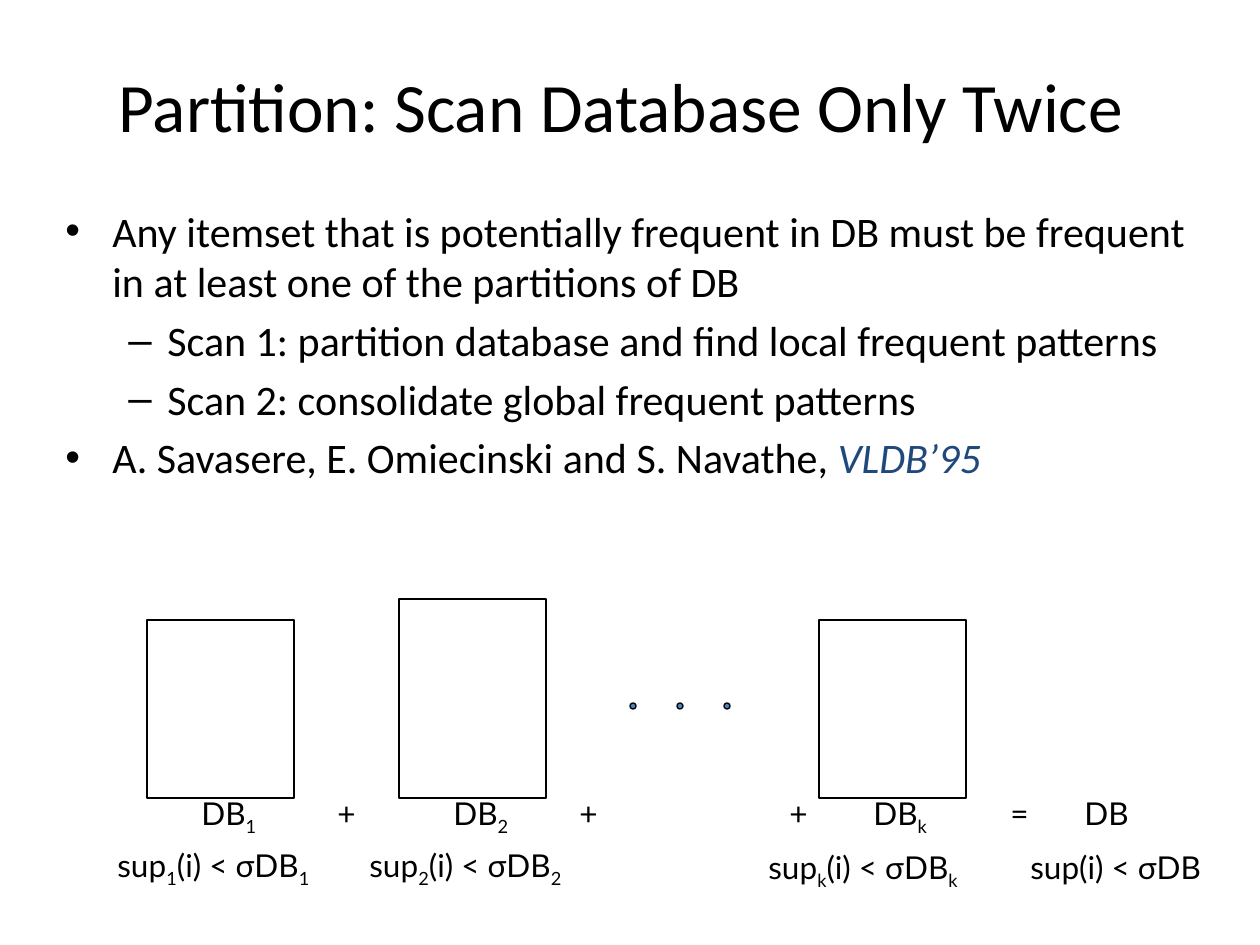
from dataclasses import dataclass

from lxml import etree
from pptx import Presentation
from pptx import util as u
from pptx.dml.color import RGBColor
from pptx.enum import shapes, text
from pptx.oxml import ns

PX_PER_INCH = 126


@dataclass(frozen=True)
class Theme:
    ink: str = "000000"
    accent: str = "1F497D"
    dot: str = "4F81BD"
    body_font: str = "Calibri"
    label_font: str = "Lato"
    title_size: float = 39.6
    body_size: float = 24
    label_size: float = 18
    body_gap: float = 4.8
    line: float = 0.75


@dataclass(frozen=True)
class Box:
    left: int
    top: int
    width: int
    height: int


@dataclass(frozen=True)
class Level:
    char: str
    margin: int
    hang: int


@dataclass(frozen=True)
class Bullet:
    level: int
    text: str
    cited: str = ""


@dataclass(frozen=True)
class Partition:
    index: str
    rect: Box
    sup_left: int
    sup_top: int


THEME = Theme()
LEVELS = (Level("•", 47, 47), Level("–", 102, 39))
BULLETS = (
    Bullet(0, "Any itemset that is potentially frequent in DB must be frequent "
              "in at least one of the partitions of DB"),
    Bullet(1, "Scan 1: partition database and find local frequent patterns"),
    Bullet(1, "Scan 2: consolidate global frequent patterns"),
    Bullet(0, "A. Savasere, E. Omiecinski and S. Navathe, ", "VLDB’95"),
)
PARTITIONS = (
    Partition("1", Box(147, 620, 147, 178), 105, 840),
    Partition("2", Box(399, 599, 147, 199), 357, 840),
    Partition("k", Box(819, 620, 147, 178), 756, 842),
)
PLUS_LEFTS = (325, 567, 777)
LABEL_TOP, LABEL_HEIGHT = 788, 50
DB_INSET, DB_WIDTH, PLUS_WIDTH, SUP_WIDTH = 42, 84, 32, 231
TOTAL_LEFT, TOTAL_WIDTH, TOTAL_TAB = 998, 189, 74
TOTAL_SUP_LEFT, TOTAL_SUP_TOP = 1018, 842
DOT_LEFT, DOT_TOP, DOT_STEP, DOT_SIZE, DOT_COUNT = 630, 703, 47, 6, 3


def px(n: int) -> int:
    return round(n * u.Inches(1) / PX_PER_INCH)


def place(box: Box) -> tuple[int, int, int, int]:
    return px(box.left), px(box.top), px(box.width), px(box.height)


def add_run(p, content: str, *, size: float, font: str, color: str = THEME.ink,
            italic: bool = False, baseline: int = 0) -> None:
    r = p.add_run()
    r.text = content
    r.font.size = u.Pt(size)
    r.font.name = font
    r.font.italic = italic
    r.font.color.rgb = RGBColor.from_string(color)
    if baseline:
        r._r.get_or_add_rPr().set("baseline", str(baseline * 1000))


def add_frame(s, box: Box):
    tf = s.shapes.add_textbox(*place(box)).text_frame
    tf.word_wrap = True
    return tf


def add_title(s) -> None:
    tf = add_frame(s, Box(84, 63, 1074, 84))
    tf.vertical_anchor = text.MSO_ANCHOR.MIDDLE
    p = tf.paragraphs[0]
    p.alignment = text.PP_ALIGN.CENTER
    add_run(p, "Partition: Scan Database Only Twice",
            size=THEME.title_size, font=THEME.body_font)


def set_bullet(p, level: Level) -> None:
    pPr = p._p.get_or_add_pPr()
    pPr.set("marL", str(px(level.margin)))
    pPr.set("indent", str(-px(level.hang)))
    etree.SubElement(pPr, ns.qn("a:buFont")).set("typeface", "Arial")
    etree.SubElement(pPr, ns.qn("a:buChar")).set("char", level.char)


def add_bullets(s) -> None:
    tf = add_frame(s, Box(53, 199, 1165, 378))
    style = dict(size=THEME.body_size, font=THEME.body_font)
    for i, item in enumerate(BULLETS):
        p = tf.add_paragraph() if i else tf.paragraphs[0]
        p.level = item.level
        if i:
            p.space_before = u.Pt(THEME.body_gap)
        set_bullet(p, LEVELS[item.level])
        add_run(p, item.text, **style)
        if item.cited:
            add_run(p, item.cited, color=THEME.accent, italic=True, **style)


def add_label(s, left: int, top: int, width: int, content: str):
    tf = add_frame(s, Box(left, top, width, LABEL_HEIGHT))
    p = tf.paragraphs[0]
    for i, part in enumerate(content.split("_")):
        add_run(p, part, size=THEME.label_size, font=THEME.label_font,
                baseline=-25 if i % 2 else 0)
    return p


def add_outline(s, kind: shapes.MSO_SHAPE, box: Box, fill: str = "") -> None:
    sp = s.shapes.add_shape(kind, *place(box))
    sp.shadow.inherit = False
    if fill:
        sp.fill.solid()
        sp.fill.fore_color.rgb = RGBColor.from_string(fill)
    else:
        sp.fill.background()
    sp.line.color.rgb = RGBColor.from_string(THEME.ink)
    sp.line.width = u.Pt(THEME.line)


def add_partition(s, part: Partition) -> None:
    add_outline(s, shapes.MSO_SHAPE.RECTANGLE, part.rect)
    add_label(s, part.rect.left + DB_INSET, LABEL_TOP, DB_WIDTH,
              f"DB_{part.index}")
    add_label(s, part.sup_left, part.sup_top, SUP_WIDTH,
              f"sup_{part.index}_(i) < σDB_{part.index}")


def add_total(s) -> None:
    p = add_label(s, TOTAL_LEFT, LABEL_TOP, TOTAL_WIDTH, "=\tDB")
    tabs = etree.SubElement(p._p.get_or_add_pPr(), ns.qn("a:tabLst"))
    tab = etree.SubElement(tabs, ns.qn("a:tab"))
    tab.set("pos", str(px(TOTAL_TAB)))
    tab.set("algn", "l")
    add_label(s, TOTAL_SUP_LEFT, TOTAL_SUP_TOP, SUP_WIDTH, "sup(i) < σDB")


def main() -> None:
    prs = Presentation()
    prs.slide_width, prs.slide_height = u.Inches(10), u.Inches(7.5)
    s = prs.slides.add_slide(prs.slide_layouts[6])
    add_title(s)
    add_bullets(s)
    for part in PARTITIONS:
        add_partition(s, part)
    for i in range(DOT_COUNT):
        add_outline(s, shapes.MSO_SHAPE.OVAL,
                    Box(DOT_LEFT + i * DOT_STEP, DOT_TOP, DOT_SIZE, DOT_SIZE),
                    THEME.dot)
    for left in PLUS_LEFTS:
        add_label(s, left, LABEL_TOP, PLUS_WIDTH, "+")
    add_total(s)
    prs.save("out.pptx")


if __name__ == "__main__":
    main()
